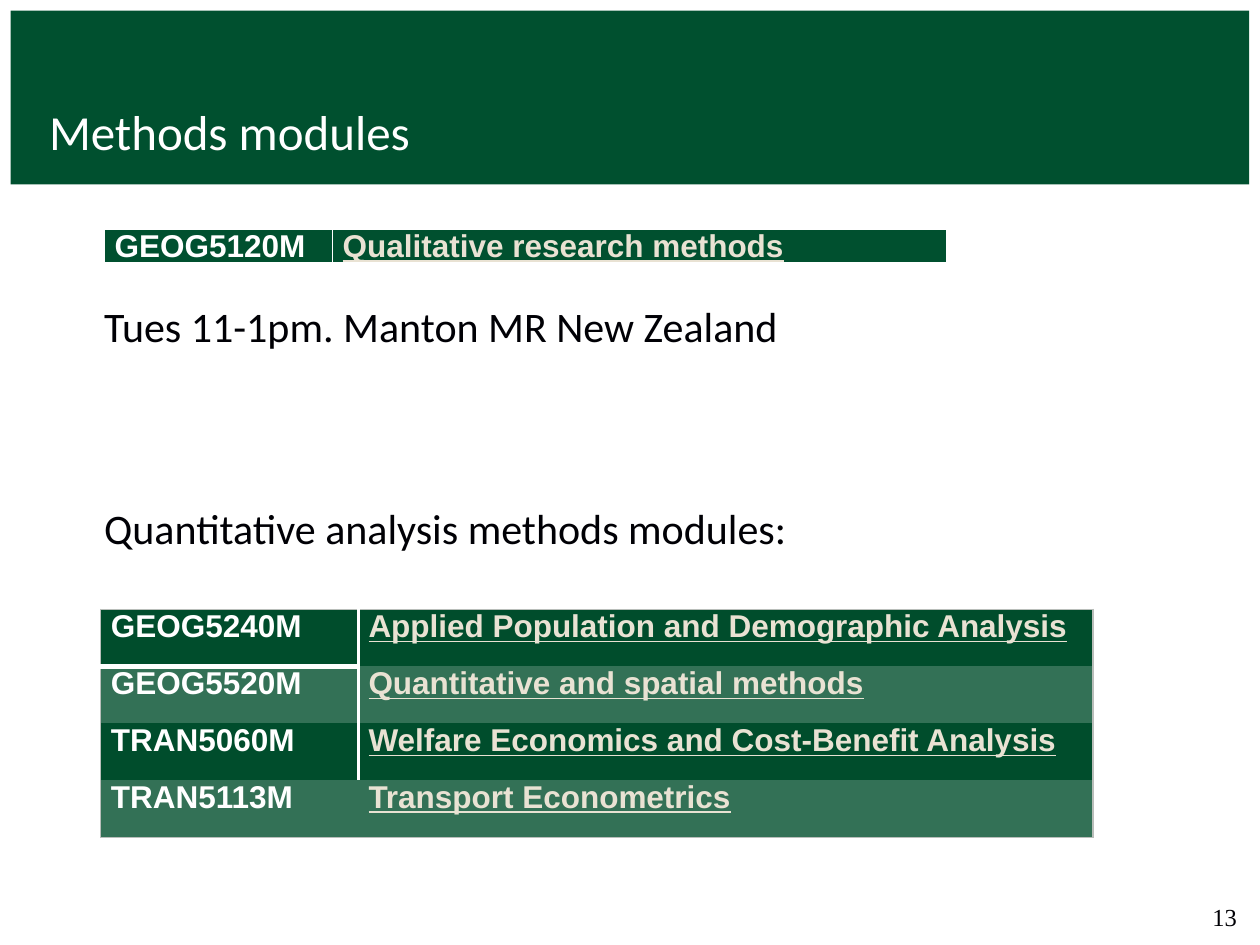
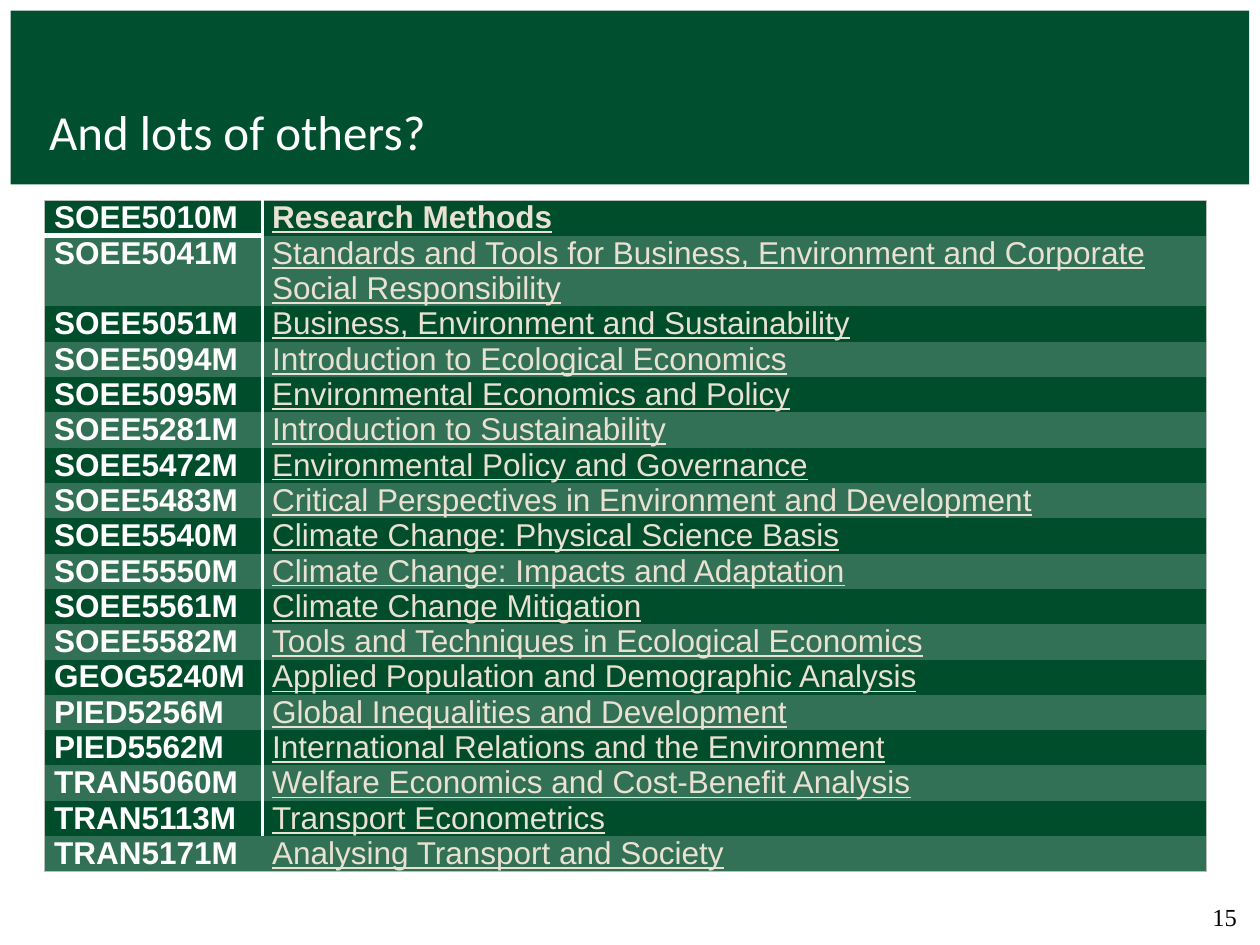
from dataclasses import dataclass

from lxml import etree
from pptx import Presentation
from pptx import util as u
from pptx.dml import color
from pptx.enum import shapes, text
from pptx.oxml import ns


@dataclass(frozen=True)
class Theme:
    green: str = "00502F"
    dark_row: str = "004D2C"
    light_row: str = "337156"
    white: str = "FFFFFF"
    cream: str = "E9E2D3"
    grey: str = "B9BEBA"
    ink: str = "000005"
    heading_font: str = "Calibri"
    table_font: str = "Arial"
    number_font: str = "Times New Roman"
    title_size: int = 28
    body_size: int = 24
    table_size: int = 18
    table_leading: float = 20.1
    number_size: int = 14


THEME = Theme()
WIDTH, HEIGHT = u.Inches(10), u.Inches(7.5)
PLAIN_TABLE = "{2D5ABB26-0587-4C30-8999-92F81FD0307C}"
OUTLINE = (THEME.grey, 0.75)
DIVIDER = (THEME.white, 2)
HEADER_RULE = (THEME.white, 3)
HAIRLINE = (THEME.white, 1)
TEXT_ROW = 3.74

QUALITATIVE = [("GEOG5120M", "Qualitative research methods")]
QUANTITATIVE = [
    ("GEOG5240M", "Applied Population and Demographic Analysis"),
    ("GEOG5520M", "Quantitative and spatial methods"),
    ("TRAN5060M", "Welfare Economics and Cost-Benefit Analysis"),
    ("TRAN5113M", "Transport Econometrics"),
]
OTHERS = [
    ("SOEE5010M", "Research Methods"),
    ("SOEE5041M", "Standards and Tools for Business, Environment and Corporate Social Responsibility"),
    ("SOEE5051M", "Business, Environment and Sustainability"),
    ("SOEE5094M", "Introduction to Ecological Economics"),
    ("SOEE5095M", "Environmental Economics and Policy"),
    ("SOEE5281M", "Introduction to Sustainability"),
    ("SOEE5472M", "Environmental Policy and Governance"),
    ("SOEE5483M", "Critical Perspectives in Environment and Development"),
    ("SOEE5540M", "Climate Change: Physical Science Basis"),
    ("SOEE5550M", "Climate Change: Impacts and Adaptation"),
    ("SOEE5561M", "Climate Change Mitigation"),
    ("SOEE5582M", "Tools and Techniques in Ecological Economics"),
    ("GEOG5240M", "Applied Population and Demographic Analysis"),
    ("PIED5256M", "Global Inequalities and Development"),
    ("PIED5562M", "International Relations and the Environment"),
    ("TRAN5060M", "Welfare Economics and Cost-Benefit Analysis"),
    ("TRAN5113M", "Transport Econometrics"),
    ("TRAN5171M", "Analysing Transport and Society"),
]


def across(percent):
    return int(WIDTH * percent / 100)


def down(percent):
    return int(HEIGHT * percent / 100)


def area(left, top, width, height):
    return across(left), down(top), across(width), down(height)


def rgb(value):
    return color.RGBColor.from_string(value)


def set_font(para, name, size, tint, bold=False, underline=False):
    font = para.font
    font.name, font.size = name, u.Pt(size)
    font.color.rgb = rgb(tint)
    font.bold, font.underline = bold, underline


def add_text(page, place, lines, font, inset=0, gap=0,
             align=text.PP_ALIGN.LEFT, anchor=text.MSO_ANCHOR.TOP):
    frame = page.shapes.add_textbox(*place).text_frame
    frame.word_wrap = True
    frame.vertical_anchor = anchor
    frame.margin_left = frame.margin_right = u.Inches(2 * inset)
    frame.margin_top = frame.margin_bottom = u.Inches(inset)
    frame.text = "\n".join(lines)
    for index, para in enumerate(frame.paragraphs):
        para.alignment = align
        if index:
            para.space_before = u.Pt(gap)
        set_font(para, *font)


def add_band(page):
    band = page.shapes.add_shape(shapes.MSO_SHAPE.RECTANGLE, *area(0.84, 1.13, 98.3, 18.4))
    band.shadow.inherit = False
    band.fill.solid()
    band.fill.fore_color.rgb = rgb(THEME.green)
    band.line.fill.background()


def add_rule(page):
    height = down(23.3)
    rule = page.shapes.add_connector(shapes.MSO_CONNECTOR.STRAIGHT,
                                     across(2.2), height, across(97.5), height)
    rule.line.color.rgb = rgb(THEME.white)
    rule.line.width = u.Pt(0.75)
    etree.SubElement(rule._element.spPr, ns.qn("a:effectLst"))


def add_page(deck, title, number):
    page = deck.slides.add_slide(deck.slide_layouts[6])
    add_band(page)
    add_rule(page)
    add_text(page, area(3.9, 6.13, 53.3, 10.8), [title],
             (THEME.heading_font, THEME.title_size, THEME.white),
             anchor=text.MSO_ANCHOR.BOTTOM)
    add_text(page, area(78.3, 94.8, 20.85, 5), [str(number)],
             (THEME.number_font, THEME.number_size, THEME.ink),
             inset=0.05, align=text.PP_ALIGN.RIGHT)
    return page


def draw_borders(cell, borders):
    properties = cell._tc.get_or_add_tcPr()
    for side in "LRTB":
        if side in borders:
            tint, points = borders[side]
            line = etree.SubElement(properties, ns.qn(f"a:ln{side}"), w=str(u.Pt(points)))
            fill = etree.SubElement(line, ns.qn("a:solidFill"))
            etree.SubElement(fill, ns.qn("a:srgbClr"), val=tint)


def banded_borders(row, column, last):
    borders = {"R" if column else "L": OUTLINE}
    if row < last:
        borders["L" if column else "R"] = DIVIDER
    else:
        borders["B"] = OUTLINE
    if row == 0:
        borders["T"] = OUTLINE
        if column == 0:
            borders["B"] = HEADER_RULE
    return borders


def boxed_borders(row, column, last):
    return {"L": HAIRLINE, "R": HAIRLINE, "T": HAIRLINE, "B": HEADER_RULE}


def banded_fill(row):
    return THEME.light_row if row % 2 else THEME.dark_row


def green_fill(row):
    return THEME.green


def fill_cell(cell, words, tint, fill, borders, bold, underline):
    draw_borders(cell, borders)
    cell.fill.solid()
    cell.fill.fore_color.rgb = rgb(fill)
    cell.margin_left = cell.margin_right = u.Inches(0.08)
    cell.margin_top = cell.margin_bottom = 0
    cell.text = words
    para = cell.text_frame.paragraphs[0]
    para.line_spacing = u.Pt(THEME.table_leading)
    set_font(para, THEME.table_font, THEME.table_size, tint, bold, underline)


def add_modules(page, left, top, widths, row_heights, modules, bold_names,
                borders=banded_borders, fill=banded_fill):
    place = area(left, top, sum(widths), sum(row_heights))
    table = page.shapes.add_table(len(modules), 2, *place).table
    table.first_row = table.horz_banding = False
    table._tbl.tblPr.find(ns.qn("a:tableStyleId")).text = PLAIN_TABLE
    for column, width in zip(table.columns, widths):
        column.width = across(width)
    last = len(modules) - 1
    for row, (module, height) in enumerate(zip(modules, row_heights)):
        table.rows[row].height = down(height)
        for column, words in enumerate(module):
            is_name = column == 1
            fill_cell(table.cell(row, column), words,
                      THEME.cream if is_name else THEME.white,
                      fill(row), borders(row, column, last),
                      bold=not is_name or row < bold_names, underline=is_name)


def build_methods(deck):
    page = add_page(deck, "Methods modules", 13)
    add_text(page, area(8.27, 31.8, 90, 56),
             ["Tues 11-1pm. Manton MR New Zealand", "Quantitative analysis methods modules:"],
             (THEME.heading_font, THEME.body_size, THEME.ink), gap=86.4)
    add_modules(page, 8, 64.5, (20.45, 58.3), [6.03] * len(QUANTITATIVE),
                QUANTITATIVE, bold_names=len(QUANTITATIVE))
    add_modules(page, 8.3, 24.27, (18.1, 48.75), [TEXT_ROW], QUALITATIVE, bold_names=1,
                borders=boxed_borders, fill=green_fill)


def build_others(deck):
    page = add_page(deck, "And lots of others?", 15)
    heights = [2 * TEXT_ROW if len(name) > 60 else TEXT_ROW for _, name in OTHERS]
    add_modules(page, 3.5, 21.2, (17.3, 74.95), heights, OTHERS, bold_names=1)


def main():
    deck = Presentation()
    deck.slide_width, deck.slide_height = WIDTH, HEIGHT
    build_methods(deck)
    build_others(deck)
    deck.save("out.pptx")


if __name__ == "__main__":
    main()
